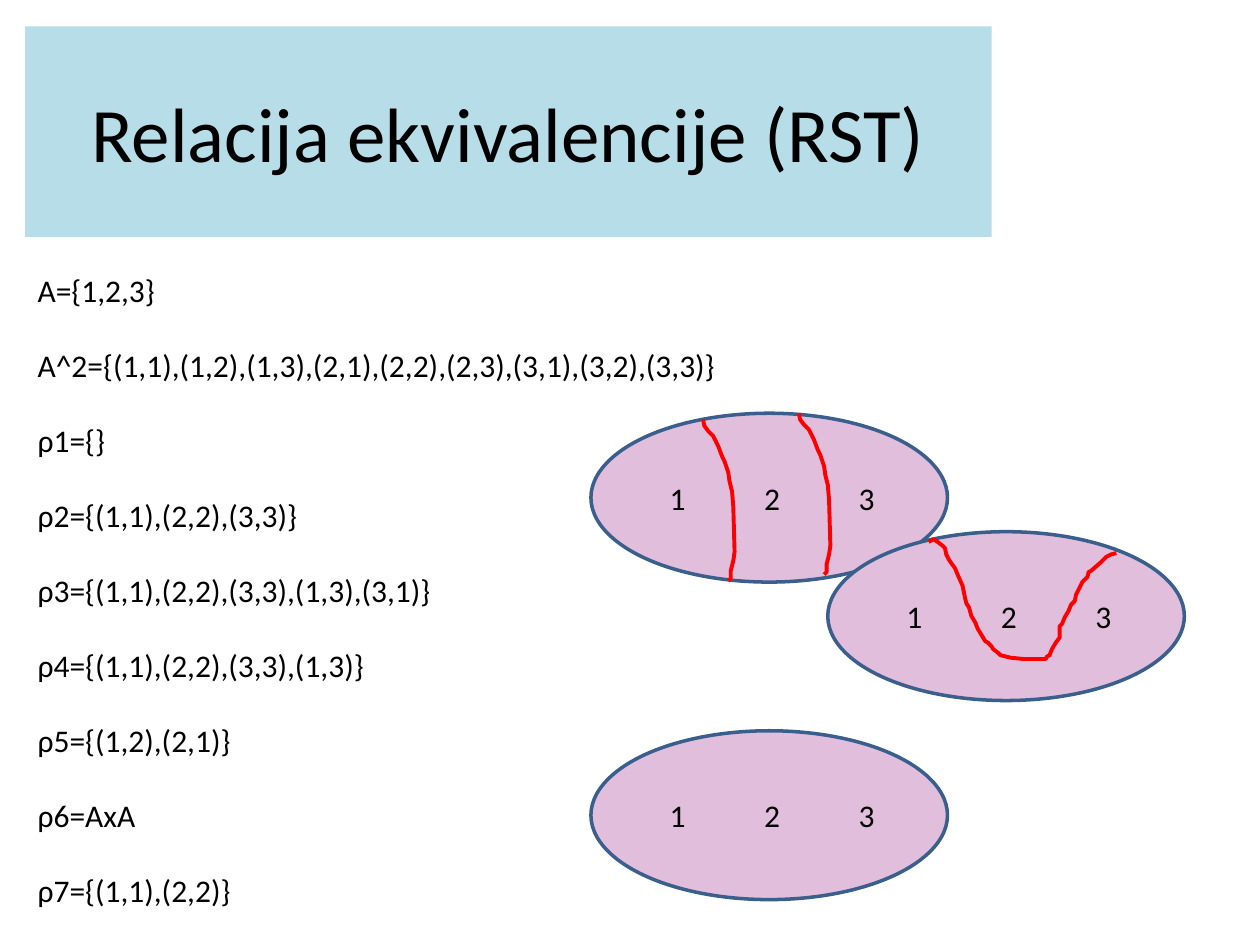
"""Build the slide on equivalence relations over a three-element set."""
from lxml import etree
from pptx import Presentation
from pptx.dml.color import RGBColor
from pptx.enum.shapes import MSO_SHAPE
from pptx.enum.text import MSO_ANCHOR, PP_ALIGN
from pptx.oxml.ns import qn
from pptx.util import Inches, Pt

ELLIPSE = MSO_SHAPE.OVAL
LEFT, CENTER = PP_ALIGN.LEFT, PP_ALIGN.CENTER
MIDDLE = MSO_ANCHOR.MIDDLE

COLORS = {name: RGBColor.from_string(value) for name, value in {
    "banner": "B7DEE8", "set": "E1BFDC", "outline": "3A5F8C",
    "divider": "FF0000", "text": "000000",
}.items()}

RELATIONS = [
    "A={1,2,3}",
    "A^2={(1,1),(1,2),(1,3),(2,1),(2,2),(2,3),(3,1),(3,2),(3,3)}",
    "ρ1={}",
    "ρ2={(1,1),(2,2),(3,3)}",
    "ρ3={(1,1),(2,2),(3,3),(1,3),(3,1)}",
    "ρ4={(1,1),(2,2),(3,3),(1,3)}",
    "ρ5={(1,2),(2,1)}",
    "ρ6=AxA",
    "ρ7={(1,1),(2,2)}",
]

SPLIT = [
    (0, 0), (0.01, 0.05), (0.04, 0.09), (0.08, 0.13), (0.1, 0.17), (0.12, 0.21),
    (0.15, 0.29), (0.17, 0.33), (0.2, 0.42), (0.21, 0.49), (0.23, 0.57),
    (0.24, 0.69), (0.25, 1.05), (0.24, 1.12), (0.22, 1.2), (0.22, 1.26), (0.2, 1.28),
]
POCKET = [
    (0, 0), (0.04, -0.02), (0.07, 0), (0.11, 0.03), (0.13, 0.05), (0.14, 0.1),
    (0.16, 0.14), (0.18, 0.17), (0.21, 0.21), (0.23, 0.26), (0.27, 0.35),
    (0.29, 0.45), (0.3, 0.49), (0.32, 0.52), (0.34, 0.59), (0.37, 0.64),
    (0.39, 0.69), (0.42, 0.74), (0.45, 0.79), (0.47, 0.8), (0.5, 0.83),
    (0.51, 0.85), (0.55, 0.88), (0.57, 0.9), (0.61, 0.91), (0.65, 0.92),
    (0.75, 0.93), (0.93, 0.93), (0.94, 0.91), (0.96, 0.9), (0.98, 0.85),
    (1.01, 0.8), (1.04, 0.76), (1.04, 0.67), (1.06, 0.65), (1.08, 0.6),
    (1.11, 0.55), (1.13, 0.5), (1.16, 0.47), (1.17, 0.42), (1.2, 0.36),
    (1.22, 0.32), (1.26, 0.28), (1.27, 0.24), (1.29, 0.23), (1.37, 0.16),
    (1.41, 0.12), (1.45, 0.1), (1.49, 0.09),
]


def format_text(paragraph, size, align=LEFT):
    paragraph.alignment = align
    paragraph.font.name = "Calibri"
    paragraph.font.size = Pt(size)
    paragraph.font.color.rgb = COLORS["text"]


presentation = Presentation()
presentation.slide_width, presentation.slide_height = Inches(10), Inches(7.5)
slide = presentation.slides.add_slide(presentation.slide_layouts[5])
shapes = slide.shapes

title = shapes.title
title.left, title.top = Inches(0.2), Inches(0.21)
title.width, title.height = Inches(7.67), Inches(1.67)
title.fill.solid()
title.fill.fore_color.rgb = COLORS["banner"]
title.text_frame.text = "Relacija ekvivalencije (RST)"
title.text_frame.vertical_anchor = MIDDLE
format_text(title.text_frame.paragraphs[0], 44, CENTER)

relation_list = shapes.add_textbox(Inches(0.2), Inches(2.1), Inches(5.65), Inches(5.3))
relation_list.text_frame.word_wrap = True
relation_list.text_frame.text = "\n".join(RELATIONS)
for paragraph in relation_list.text_frame.paragraphs:
    format_text(paragraph, 18)
    paragraph.space_after = Pt(21.25)

partitions = [
    (4.69, 3.28, [(5.58, 3.33, SPLIT), (6.34, 3.28, SPLIT)]),
    (6.57, 4.22, [(7.37, 4.3, POCKET)]),
    (4.69, 5.8, []),
]
for left, top, dividers in partitions:
    partition = shapes.add_shape(ELLIPSE, Inches(left), Inches(top), Inches(2.83), Inches(1.34))
    partition.shadow.inherit = False
    partition.fill.solid()
    partition.fill.fore_color.rgb = COLORS["set"]
    partition.line.color.rgb = COLORS["outline"]
    partition.line.width = Pt(2)
    elements = partition.text_frame
    elements.margin_left = Inches(0.21)
    elements.vertical_anchor = MIDDLE
    elements.text = "1\t2\t3"
    format_text(elements.paragraphs[0], 18)
    properties = elements.paragraphs[0]._p.get_or_add_pPr()
    tab_list = etree.Element(qn("a:tabLst"))
    for position in (0.75, 1.5):
        etree.SubElement(tab_list, qn("a:tab"), pos=str(Inches(position)), algn="l")
    properties.find(qn("a:defRPr")).addprevious(tab_list)

    for start_x, start_y, offsets in dividers:
        points = [(Inches(start_x + dx), Inches(start_y + dy)) for dx, dy in offsets]
        builder = shapes.build_freeform(*points[0])
        builder.add_line_segments(points[1:], close=False)
        divider = builder.convert_to_shape()
        divider.shadow.inherit = False
        divider.fill.background()
        divider.line.color.rgb = COLORS["divider"]
        divider.line.width = Pt(2.25)

presentation.save("out.pptx")
